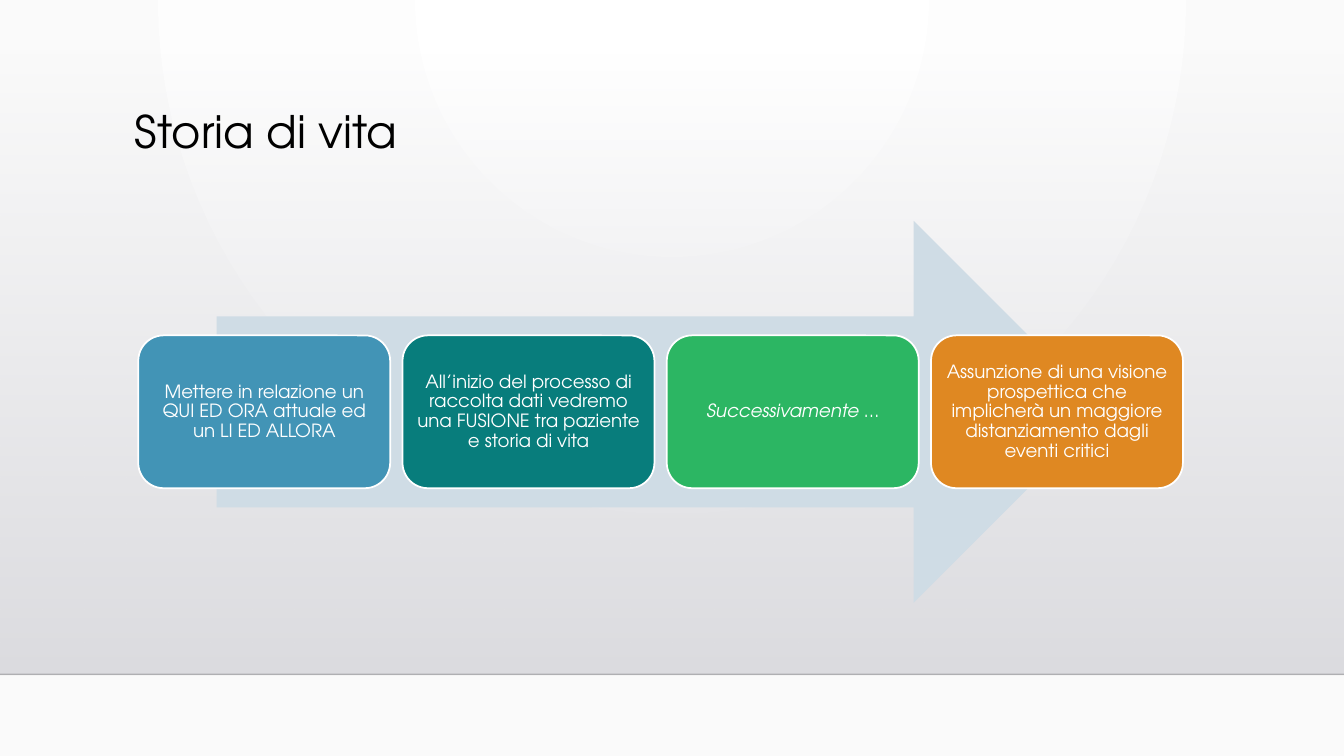
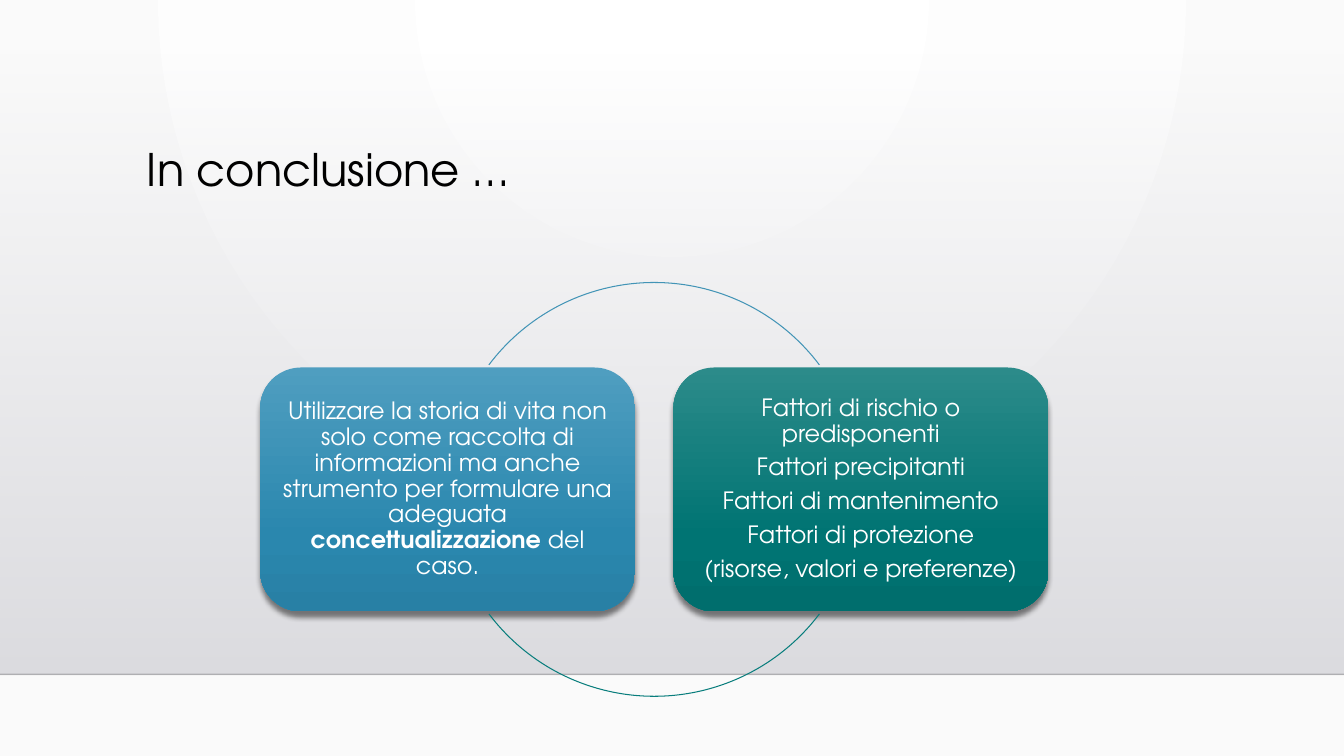
from lxml.etree import SubElement
from pptx import Presentation
from pptx.dml.color import RGBColor
from pptx.enum.shapes import MSO_CONNECTOR, MSO_SHAPE
from pptx.enum.text import MSO_ANCHOR, PP_ALIGN
from pptx.oxml.ns import qn
from pptx.util import Pt

FONT = "TeX Gyre Adventor"
WIDTH, HEIGHT = 960, 540
FLOOR_TOP, FLOOR_HEIGHT = 36.7, 445
COLORS = {
    "white": "FFFFFF",
    "backdrop": "FAFAFA",
    "floor_top": "DCDCE0",
    "floor_bottom": "DEDEE2",
    "horizon": "000001",
    "black": "000000",
    "arrow": "CFDCE5",
    "blue": "4294B6",
    "teal": "087D7C",
    "green": "2CB663",
    "orange": "DF8822",
}
CARD_GRADIENTS = {
    "blue": [(0, "4F9EC0", 100), (69, "2A87AE", 100), (100, "2880A5", 100)],
    "teal": [(0, "2C8B8A", 100), (69, "007473", 100), (100, "006E6D", 100)],
}
STEPS = [
    ("blue", "Mettere in relazione un QUI ED ORA attuale ed un LI ED ALLORA", ""),
    ("teal", "All’inizio del processo di raccolta dati vedremo una FUSIONE "
             "tra paziente e storia di vita", ""),
    ("green", "Successivamente …", "italic"),
    ("orange", "Assunzione di una visione prospettica che implicherà un maggiore "
               "distanziamento dagli eventi critici", ""),
]
CARDS = [
    ("blue", 217, [[
        ("Utilizzare la storia di vita non solo come raccolta di informazioni "
         "ma anche strumento per formulare una adeguata ", ""),
        ("concettualizzazione", "bold"),
        (" del caso.", ""),
    ]]),
    ("teal", 37, [[(factor, "")] for factor in (
        "Fattori di rischio o predisponenti",
        "Fattori precipitanti",
        "Fattori di mantenimento",
        "Fattori di protezione",
        "(risorse, valori e preferenze)",
    )]),
]


def rgb(name):
    return RGBColor.from_string(COLORS[name])


def points(*values):
    return [Pt(value) for value in values]


def set_gradient(fill, element, stops, radial=False):
    fill.gradient()
    gradient = element.find(".//" + qn("a:gradFill"))
    for child in list(gradient):
        gradient.remove(child)
    stop_list = SubElement(gradient, qn("a:gsLst"))
    for position, color, opacity in stops:
        stop = SubElement(stop_list, qn("a:gs"), pos=str(position * 1000))
        tone = SubElement(stop, qn("a:srgbClr"), val=color)
        if opacity < 100:
            SubElement(tone, qn("a:alpha"), val=str(opacity * 1000))
    if radial:
        route = SubElement(gradient, qn("a:path"), path="circle")
        SubElement(route, qn("a:fillToRect"), l="43000", t="0", r="43000", b="100000")
    else:
        SubElement(gradient, qn("a:lin"), ang="5400000", scaled="0")


def add_plain_shape(slide, preset, box):
    shape = slide.shapes.add_shape(preset, *points(*box))
    shape.shadow.inherit = False
    shape.line.fill.background()
    return shape


def write_text(frame, paragraphs, size, color, align, inset, after=0):
    frame.word_wrap = True
    frame.margin_left = frame.margin_right = Pt(inset[0])
    frame.margin_top = frame.margin_bottom = Pt(inset[1])
    for index, runs in enumerate(paragraphs):
        paragraph = frame.paragraphs[0] if index == 0 else frame.add_paragraph()
        paragraph.alignment = align
        paragraph.line_spacing = 0.9
        paragraph.space_after = Pt(after)
        for text, style in runs:
            run = paragraph.add_run()
            run.text = text
            run.font.name = FONT
            run.font.size = Pt(size)
            run.font.color.rgb = rgb(color)
            run.font.bold = style == "bold"
            run.font.italic = style == "italic"


def add_backdrop(slide):
    set_gradient(slide.background.fill, slide.element,
                 [(0, COLORS["white"], 100), (100, COLORS["backdrop"], 100)], radial=True)
    floor = add_plain_shape(slide, MSO_SHAPE.RECTANGLE, (0, FLOOR_TOP, WIDTH, FLOOR_HEIGHT))
    set_gradient(floor.fill, floor.element,
                 [(0, COLORS["floor_top"], 0), (100, COLORS["floor_bottom"], 100)])
    bottom = FLOOR_TOP + FLOOR_HEIGHT
    horizon = slide.shapes.add_connector(MSO_CONNECTOR.STRAIGHT,
                                         *points(0, bottom, WIDTH, bottom))
    horizon.line.color.rgb = rgb("horizon")
    horizon.line.width = Pt(1)
    tone = horizon.element.spPr.find(".//" + qn("a:srgbClr"))
    SubElement(tone, qn("a:alpha"), val="20000")
    SubElement(horizon.element.spPr, qn("a:effectLst"))


def add_title(slide, text, box, anchor):
    frame = slide.shapes.add_textbox(*points(*box)).text_frame
    frame.vertical_anchor = anchor
    write_text(frame, [[(text, "")]], 32, "black", PP_ALIGN.LEFT, (7.2, 3.6))


def add_rounded_text(slide, box, paragraphs, size, inset):
    panel = add_plain_shape(slide, MSO_SHAPE.ROUNDED_RECTANGLE, box)
    panel.text_frame.vertical_anchor = MSO_ANCHOR.MIDDLE
    write_text(panel.text_frame, paragraphs, size, "white", PP_ALIGN.CENTER,
               (inset, inset), after=round(size * 0.35, 1))
    return panel


def add_process(slide, box):
    left, top, width, height = box
    inner = width * 0.85
    arrow = add_plain_shape(slide, MSO_SHAPE.RIGHT_ARROW,
                            (left + (width - inner) / 2, top, inner, height))
    arrow.fill.solid()
    arrow.fill.fore_color.rgb = rgb("arrow")
    gap = 8.8
    step_width = (width - gap * (len(STEPS) - 1)) / len(STEPS)
    step_height = height * 0.4
    for index, (color, text, style) in enumerate(STEPS):
        step = add_rounded_text(
            slide,
            (left + index * (step_width + gap), top + (height - step_height) / 2,
             step_width, step_height),
            [[(text, style)]], 13, 3.6)
        step.fill.solid()
        step.fill.fore_color.rgb = rgb(color)
        step.line.color.rgb = rgb("white")
        step.line.width = Pt(1.25)


def add_cycle(slide, box):
    left, top, width, height = box
    card_width, card_height = 267.8, 174.2
    radius = height / 2
    for index, (color, start, paragraphs) in enumerate(CARDS):
        card = add_rounded_text(
            slide,
            (left + index * (width - card_width), top + (height - card_height) / 2,
             card_width, card_height),
            paragraphs, 17, 5)
        set_gradient(card.fill, card.element, CARD_GRADIENTS[color])
        effects = card.element.spPr.find(qn("a:effectLst"))
        shade = SubElement(effects, qn("a:outerShdw"), blurRad=str(Pt(4)),
                           dist=str(Pt(4)), dir="5400000", rotWithShape="0")
        tone = SubElement(shade, qn("a:srgbClr"), val=COLORS["black"])
        SubElement(tone, qn("a:alpha"), val="48000")
        arc = add_plain_shape(slide, MSO_SHAPE.ARC,
                              (left + width / 2 - radius, top, height, height))
        arc.adjustments[0] = start * 0.6
        arc.adjustments[1] = (start + 106) * 0.6
        arc.fill.background()
        arc.line.color.rgb = rgb(color)
        arc.line.width = Pt(0.75)


def add_slide(deck):
    slide = deck.slides.add_slide(deck.slide_layouts[6])
    add_backdrop(slide)
    return slide


def build_life_story(deck):
    slide = add_slide(deck)
    add_title(slide, "Storia di vita", (89.3, 74.9, 756, 82.8), MSO_ANCHOR.TOP)
    add_process(slide, (98.8, 157.7, 746.2, 272.9))


def build_conclusion(deck):
    slide = add_slide(deck)
    add_cycle(slide, (185.8, 201.8, 563, 295.6))
    add_title(slide, "In conclusione …", (97.9, 77.8, 716.4, 90.7), MSO_ANCHOR.MIDDLE)


def main():
    deck = Presentation()
    deck.slide_width, deck.slide_height = points(WIDTH, HEIGHT)
    build_life_story(deck)
    build_conclusion(deck)
    deck.save("out.pptx")


if __name__ == "__main__":
    main()
